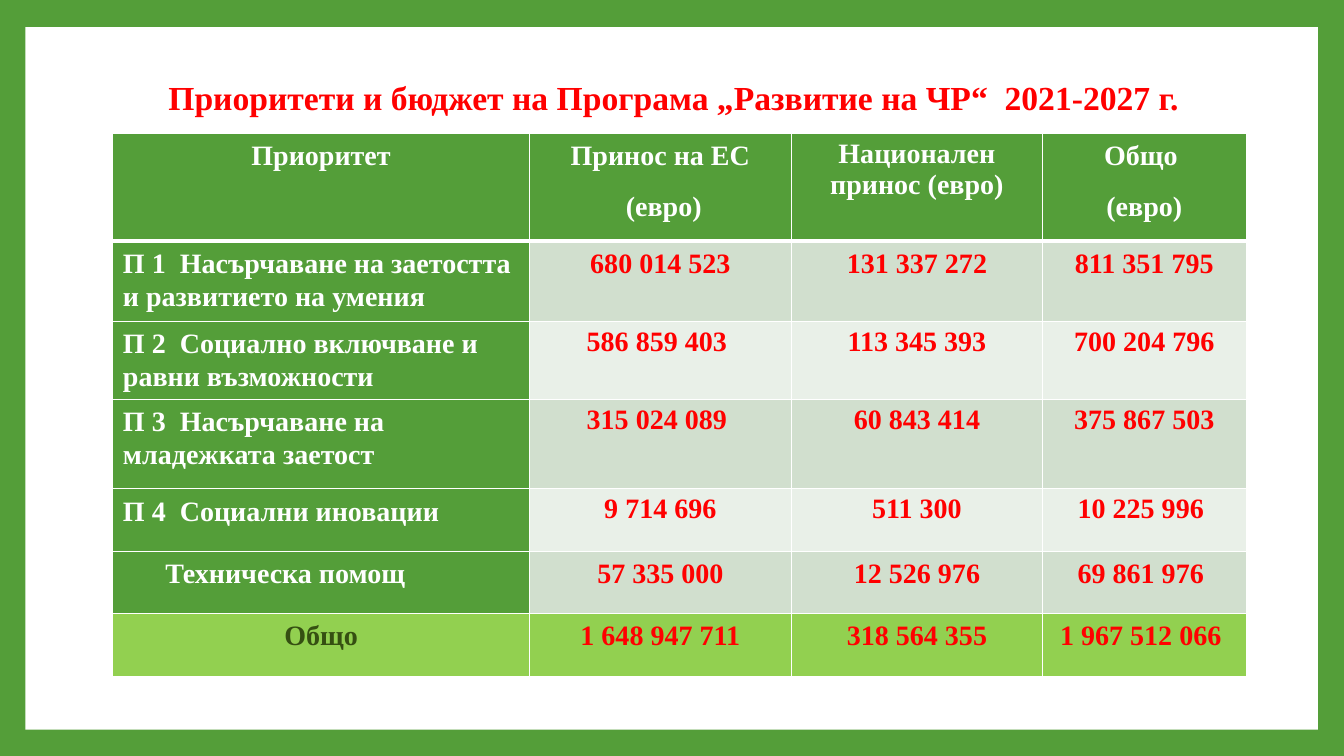
from dataclasses import dataclass

from lxml.etree import SubElement
from pptx import Presentation
from pptx.dml.color import RGBColor
from pptx.enum.shapes import MSO_SHAPE
from pptx.enum.text import MSO_ANCHOR, MSO_AUTO_SIZE, PP_ALIGN
from pptx.oxml.ns import qn
from pptx.util import Inches, Pt


@dataclass(frozen=True)
class Theme:
    font: str = "Times New Roman"
    title_size: int = 24
    table_size: int = 20
    green: str = "549E39"
    white: str = "FFFFFF"
    red: str = "FF0000"
    bands: tuple = ("D1DFCE", "E9F0E8")
    total_fill: str = "92D050"
    total_label: str = "354F12"
    grid_line: float = 1
    header_line: float = 3


HEADERS = [["Приоритет"], ["Принос на ЕС", " (евро)"],
           ["Национален принос (евро)"], ["Общо ", "(евро)"]]
PRIORITIES = [
    ("П 1  Насърчаване на заетостта и развитието на умения",
     "680 014 523", "131 337 272", "811 351 795"),
    ("П 2  Социално включване и равни възможности",
     "586 859 403 ", "113 345 393", "700 204 796"),
    ("П 3  Насърчаване на младежката заетост",
     "315 024 089 ", "60 843 414", "375 867 503"),
    ("П 4  Социални иновации", "9 714 696", "511 300", "10 225 996 "),
    ("Техническа помощ", "57 335 000", "12 526 976", "69 861 976 "),
]
TOTAL = ("Общо", "1 648 947 711", "318 564 355", "1 967 512 066 ")
COLUMN_WIDTHS = [4.13, 2.6, 2.49, 2.02]
ROW_HEIGHTS = [1.07, 0.8, 0.77, 0.89, 0.62, 0.62, 0.62]
TECHNICAL_ROW = 5
TIGHT_ROWS = (2, 3, 4)  # amounts here keep single line spacing


class BudgetSlide:
    def __init__(self, deck, theme):
        self.deck, self.theme = deck, theme
        self.slide = deck.slides.add_slide(deck.slide_layouts[5])
        self.paint(self.slide.background, theme.green)

    def area(self, left, top, width, height):
        """Turn percentages of the slide's size into lengths."""
        wide, high = self.deck.slide_width, self.deck.slide_height
        return [int(share * side / 100) for share, side in
                ((left, wide), (top, high), (width, wide), (height, high))]

    def paint(self, target, color):
        target.fill.solid()
        target.fill.fore_color.rgb = RGBColor.from_string(color)

    def add_text(self, paragraph, text, size, color):
        run = paragraph.add_run()
        run.text = text
        font = run.font
        font.name, font.size, font.bold = self.theme.font, Pt(size), True
        font.color.rgb = RGBColor.from_string(color)

    def panel(self, *shares):
        panel = self.slide.shapes.add_shape(MSO_SHAPE.RECTANGLE, *self.area(*shares))
        panel.shadow.inherit = False
        self.paint(panel, self.theme.white)
        panel.line.fill.background()
        self.slide.shapes._spTree.insert(2, panel._element)

    def title(self, text, *shares):
        title = self.slide.shapes.title
        title.left, title.top, title.width, title.height = self.area(*shares)
        frame = title.text_frame
        frame.word_wrap, frame.auto_size = True, MSO_AUTO_SIZE.NONE
        frame.vertical_anchor = MSO_ANCHOR.MIDDLE
        heading = frame.paragraphs[0]
        heading.alignment, heading.line_spacing = PP_ALIGN.CENTER, 0.9
        heading._p.get_or_add_pPr().set("marL", str(Inches(0.16)))
        self.add_text(heading, text, self.theme.title_size, self.theme.red)

    def border(self, cell, top, bottom):
        thin = self.theme.grid_line
        properties = cell._tc.get_or_add_tcPr()
        for side, width in (("L", thin), ("R", thin), ("T", top), ("B", bottom)):
            line = SubElement(properties, qn(f"a:ln{side}"), w=str(Pt(width)))
            solid = SubElement(line, qn("a:solidFill"))
            SubElement(solid, qn("a:srgbClr"), val=self.theme.white)

    def cell(self, cell, lines, fill, color, centred=True, tight=False, loose=True):
        """Fill a cell; tight drops paragraph spacing, loose widens the lines."""
        self.paint(cell, fill)
        for index, text in enumerate(lines):
            frame = cell.text_frame
            paragraph = frame.add_paragraph() if index else frame.paragraphs[0]
            paragraph.alignment = PP_ALIGN.CENTER if centred else PP_ALIGN.LEFT
            if not tight:
                paragraph.space_before, paragraph.space_after = Pt(5), Pt(8)
                paragraph.line_spacing = 1.07 if loose else 1.0
            self.add_text(paragraph, text, self.theme.table_size, color)

    def budget_table(self, *shares):
        theme = self.theme
        rows = [HEADERS] + [[[text] for text in row] for row in PRIORITIES + [TOTAL]]
        last = len(rows) - 1
        table = self.slide.shapes.add_table(
            len(rows), len(HEADERS), *self.area(*shares)).table
        for column, width in zip(table.columns, COLUMN_WIDTHS):
            column.width = Inches(width)
        for row, height in zip(table.rows, ROW_HEIGHTS):
            row.height = Inches(height)
        for r, row in enumerate(rows):
            for c, lines in enumerate(row):
                cell = table.cell(r, c)
                self.border(cell, theme.header_line if r == 1 else theme.grid_line,
                            theme.header_line if r == 0 else theme.grid_line)
                if r == 0:
                    self.cell(cell, lines, theme.green, theme.white, loose=c != 2)
                elif r == last:
                    self.cell(cell, lines, theme.total_fill,
                              theme.red if c else theme.total_label)
                elif c == 0:
                    self.cell(cell, lines, theme.green, theme.white, centred=False)
                else:
                    self.cell(cell, lines, theme.bands[(r - 1) % 2], theme.red,
                              tight=r in TIGHT_ROWS)
        technical = table.cell(TECHNICAL_ROW, 0).text_frame.paragraphs[0]
        technical._p.get_or_add_pPr().set("marL", str(Inches(0.42)))


def main():
    deck = Presentation()
    deck.slide_width, deck.slide_height = Inches(13.33), Inches(7.5)
    budget = BudgetSlide(deck, Theme())
    budget.panel(1.88, 3.6, 96.17, 92.93)
    budget.title("Приоритети и бюджет на Програма „Развитие на ЧР“  2021-2027 г.",
                 3.68, 9.8, 91.67, 6.67)
    budget.budget_table(8.4, 17.6, 84.32, 71.87)
    deck.save("out.pptx")


if __name__ == "__main__":
    main()
